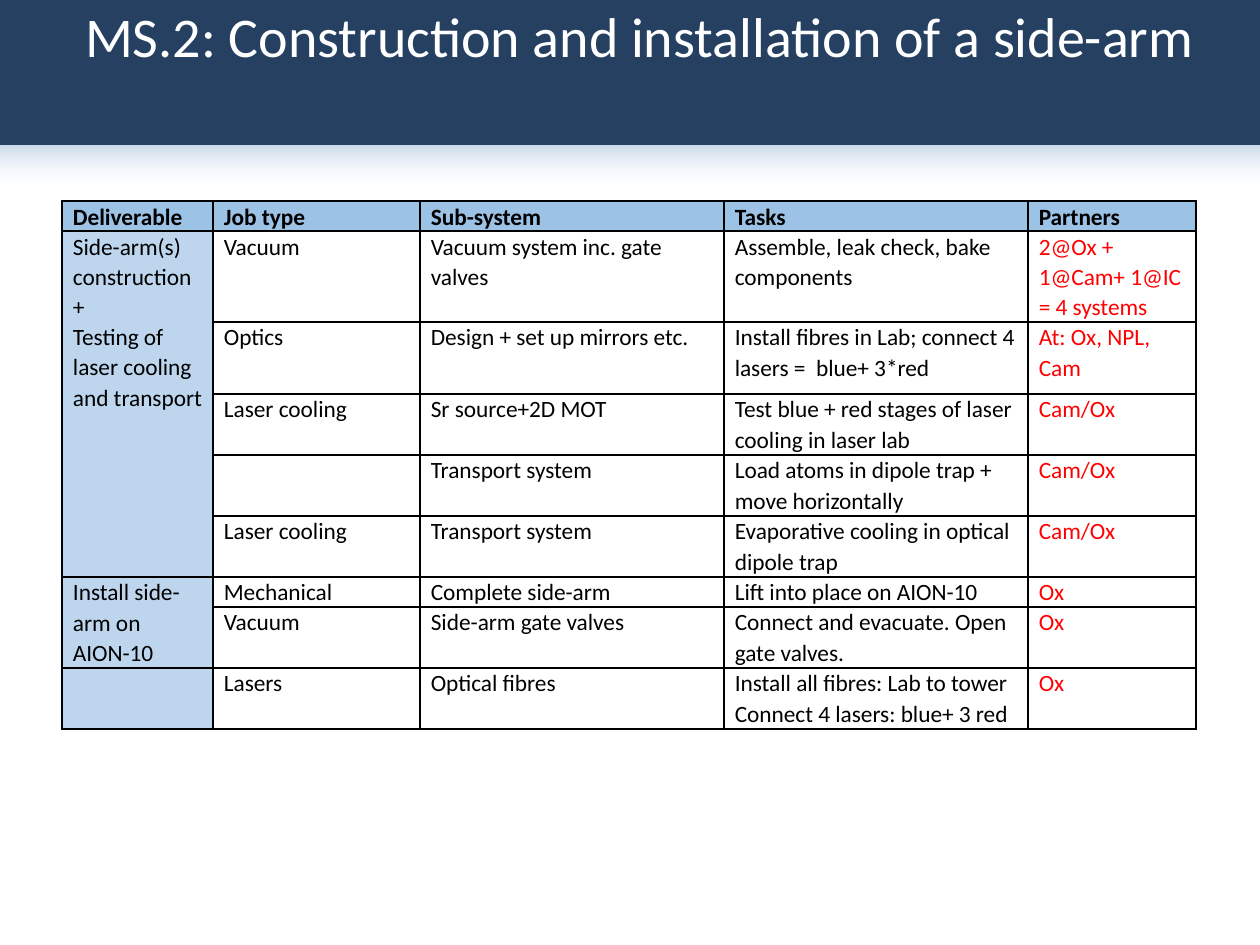
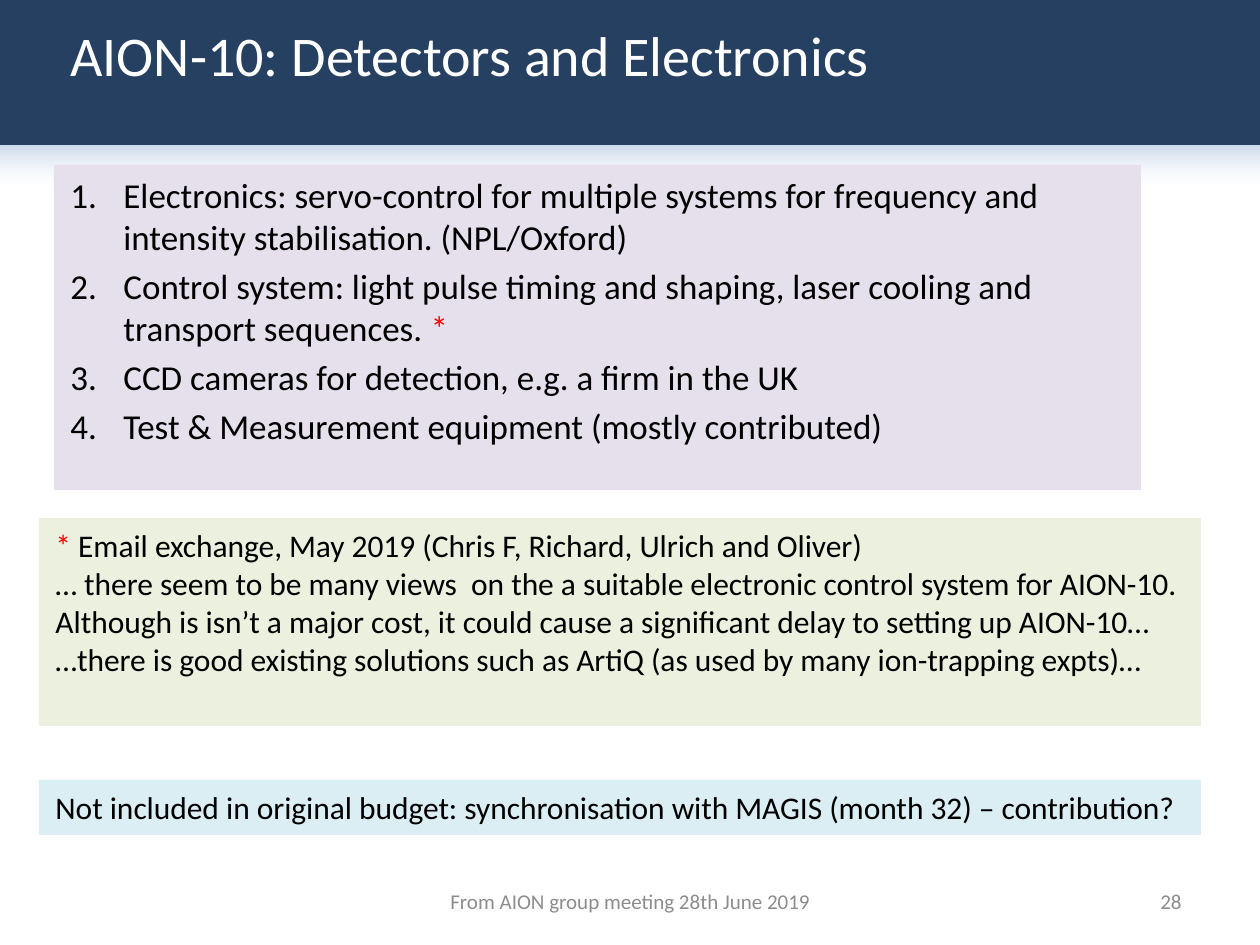
from lxml.etree import SubElement
from pptx import Presentation
from pptx.dml.color import RGBColor
from pptx.enum.shapes import MSO_SHAPE
from pptx.enum.text import MSO_ANCHOR, PP_ALIGN
from pptx.oxml import parse_xml
from pptx.oxml.ns import nsdecls, qn
from pptx.util import Emu, Pt

PX_PER_INCH = 168
SLIDE_WIDTH, SLIDE_HEIGHT = 1260, 945
BAND_HEIGHT, FADE_HEIGHT = 145, 40

NAVY, WHITE, BLACK, RED, GREY = "254061", "FFFFFF", "000000", "FF0000", "8C8C8C"
FADE_STOPS = (("95B3D7", 50), ("E1E8F5", 0))
HEADER_BLUE, DELIVERABLE_BLUE = "9CC2E5", "BDD6EE"
LILAC, PALE_GREEN, PALE_BLUE = "E6E0EC", "EBF1DE", "DBEEF4"

TITLE = {"size": Pt(24), "name": "Calibri"}
LIST = {"size": Pt(15), "name": "Calibri"}
NOTE = {"size": Pt(13.5), "name": "Calibri"}
FOOTER = {"size": Pt(9), "name": "Calibri"}
CELL = {"size": Pt(10), "name": "Calibri", "bold": False}
CELL_HEADER = {**CELL, "bold": True}

COLUMN_WIDTHS = (151, 207, 304, 304, 168)
ROW_HEIGHTS = (30, 91, 72, 61, 61, 61, 30, 61, 61)
MERGED_ROWS = ((1, 5), (6, 7))
TASK_ROWS = (
    ("Deliverable", "Job type", "Sub-system", "Tasks", "Partners"),
    ("Side-arm(s) construction\n+\nTesting of\nlaser cooling and transport",
     "Vacuum", "Vacuum system inc. gate valves",
     "Assemble, leak check, bake components", "2@Ox + 1@Cam+ 1@IC = 4 systems"),
    ("", "Optics", "Design + set up mirrors etc.",
     "Install fibres in Lab; connect 4 lasers =  blue+ 3*red", "At: Ox, NPL, Cam"),
    ("", "Laser cooling", "Sr source+2D MOT",
     "Test blue + red stages of laser cooling in laser lab", "Cam/Ox"),
    ("", "", "Transport system",
     "Load atoms in dipole trap + move horizontally", "Cam/Ox"),
    ("", "Laser cooling", "Transport system",
     "Evaporative cooling in optical dipole trap", "Cam/Ox"),
    ("Install side-arm on AION-10", "Mechanical", "Complete side-arm",
     "Lift into place on AION-10", "Ox"),
    ("", "Vacuum", "Side-arm gate valves",
     "Connect and evacuate. Open gate valves.", "Ox"),
    ("", "Lasers", "Optical fibres",
     "Install all fibres: Lab to tower\nConnect 4 lasers: blue+ 3 red", "Ox"),
)

WORK_ITEMS = (
    [("Electronics: servo-control for multiple systems for frequency and "
      "intensity stabilisation. (NPL/Oxford)", BLACK)],
    [("Control system: light pulse timing and shaping, laser cooling and "
      "transport sequences. ", BLACK), ("*", RED)],
    [("CCD cameras for detection, e.g. a firm in the UK", BLACK)],
    [("Test & Measurement equipment (mostly contributed)", BLACK)],
)
EMAIL_NOTE = (
    [("* ", RED),
     ("Email exchange, May 2019 (Chris F, Richard, Ulrich and Oliver)", BLACK)],
    [("… there seem to be many views  on the a suitable electronic control system "
      "for AION-10. Although is isn’t a major cost, it could cause a significant "
      "delay to setting up AION-10…", BLACK)],
    [("…there is good existing solutions such as ArtiQ (as used by many "
      "ion-trapping expts)…", BLACK)],
)
BUDGET_NOTE = (
    [("Not included in original budget: synchronisation with MAGIS (month 32) "
      "– contribution?", BLACK)],
)


def px(length):
    return Emu(round(length * 914400 / PX_PER_INCH))


def colour(value):
    return RGBColor.from_string(value)


def set_values(target, values):
    for name, value in values.items():
        setattr(target, name, value)


def paint(fill, value):
    fill.solid()
    fill.fore_color.rgb = colour(value)


def write(frame, paragraphs, font, layout=None):
    """Fill a text frame; each paragraph is a list of (text, colour) spans."""
    for index, spans in enumerate(paragraphs):
        para = frame.paragraphs[0] if index == 0 else frame.add_paragraph()
        set_values(para, layout or {})
        for text, ink in spans:
            span = para.add_run()
            span.text = text
            set_values(span.font, font)
            span.font.color.rgb = colour(ink)


def add_text(slide, box, paragraphs, font, layout=None, frame_values=None, fill=None):
    shape = slide.shapes.add_textbox(*map(px, box))
    if fill:
        paint(shape.fill, fill)
    frame = shape.text_frame
    set_values(frame, {"word_wrap": True, **(frame_values or {})})
    write(frame, paragraphs, font, layout)
    return frame


def add_rectangle(slide, box):
    shape = slide.shapes.add_shape(MSO_SHAPE.RECTANGLE, *map(px, box))
    shape.shadow.inherit = False
    shape.line.fill.background()
    return shape


def add_header(slide):
    """Draw the title band and the soft fade below it."""
    fade = add_rectangle(slide, (0, BAND_HEIGHT, SLIDE_WIDTH, FADE_HEIGHT))
    fade.fill.gradient()
    fade.fill.gradient_angle = 270
    for stop, (value, opacity) in zip(fade.fill.gradient_stops, FADE_STOPS):
        stop.color.rgb = colour(value)
    stops = fade.element.spPr.iter(qn("a:srgbClr"))
    for element, (value, opacity) in zip(stops, FADE_STOPS):
        SubElement(element, qn("a:alpha"), val=str(opacity * 1000))
    band = add_rectangle(slide, (0, 0, SLIDE_WIDTH, BAND_HEIGHT))
    paint(band.fill, NAVY)


def add_title(slide, box, text, layout, frame_values):
    add_text(slide, box, [[(text, WHITE)]], TITLE, layout, frame_values)


def add_borders(cell):
    properties = cell._tc.get_or_add_tcPr()
    for side in "LRTB":
        properties.append(parse_xml(
            f'<a:ln{side} {nsdecls("a")} w="12700"><a:solidFill>'
            f'<a:srgbClr val="{BLACK}"/></a:solidFill></a:ln{side}>'))


def add_task_table(slide, left, top):
    box = (left, top, sum(COLUMN_WIDTHS), sum(ROW_HEIGHTS))
    table = slide.shapes.add_table(
        len(ROW_HEIGHTS), len(COLUMN_WIDTHS), *map(px, box)).table
    set_values(table, {"first_row": False, "horz_banding": False})
    for column, width in zip(table.columns, COLUMN_WIDTHS):
        column.width = px(width)
    for row, height in zip(table.rows, ROW_HEIGHTS):
        row.height = px(height)
    margins = {"margin_left": px(11), "margin_right": px(11),
               "margin_top": 0, "margin_bottom": 0}
    last_column = len(COLUMN_WIDTHS) - 1
    for row_index, texts in enumerate(TASK_ROWS):
        for column_index, text in enumerate(texts):
            cell = table.cell(row_index, column_index)
            set_values(cell, margins)
            add_borders(cell)
            is_header = row_index == 0
            if is_header:
                paint(cell.fill, HEADER_BLUE)
            elif column_index == 0:
                paint(cell.fill, DELIVERABLE_BLUE)
            else:
                cell.fill.background()
            if text:
                is_partner = column_index == last_column and not is_header
                ink = RED if is_partner else BLACK
                write(cell.text_frame, [[(line, ink)] for line in text.split("\n")],
                      CELL_HEADER if is_header else CELL, {"line_spacing": 1.07})
    for first, last in MERGED_ROWS:
        table.cell(first, 0).merge(table.cell(last, 0))


def add_numbered_list(slide, box, items, fill):
    frame = add_text(slide, box, items, LIST, {"space_before": Pt(3)}, fill=fill)
    for para in frame.paragraphs:
        properties = para._p.get_or_add_pPr()
        properties.set("marL", str(px(53)))
        properties.set("indent", str(-px(53)))
        SubElement(properties, qn("a:buFont"), typeface="+mj-lt")
        SubElement(properties, qn("a:buAutoNum"), type="arabicPeriod")


def add_footer(slide, text, number):
    middle = {"vertical_anchor": MSO_ANCHOR.MIDDLE}
    for left, width, words, align in ((430, 400, text, PP_ALIGN.CENTER),
                                      (904, 294, number, PP_ALIGN.RIGHT)):
        add_text(slide, (left, 876, width, 50), [[(words, GREY)]], FOOTER,
                 {"alignment": align}, middle)


def build_side_arm_slide(slide):
    add_header(slide)
    add_title(slide, (32, -10, 1215, 158),
              "MS.2: Construction and installation of a side-arm",
              {"alignment": PP_ALIGN.CENTER},
              {"vertical_anchor": MSO_ANCHOR.TOP, "margin_top": px(11)})
    add_task_table(slide, 62, 201)


def build_detectors_slide(slide):
    add_header(slide)
    add_title(slide, (54, -34, 1201, 177), "AION-10: Detectors and Electronics",
              {"alignment": PP_ALIGN.LEFT}, {"vertical_anchor": MSO_ANCHOR.MIDDLE})
    add_numbered_list(slide, (54, 165, 1087, 325), WORK_ITEMS, LILAC)
    add_footer(slide, "From AION group meeting 28th June 2019", "28")
    add_text(slide, (39, 518, 1162, 208), EMAIL_NOTE, NOTE, fill=PALE_GREEN)
    add_text(slide, (39, 780, 1162, 55), BUDGET_NOTE, NOTE, fill=PALE_BLUE)


def main():
    deck = Presentation()
    set_values(deck, {"slide_width": px(SLIDE_WIDTH), "slide_height": px(SLIDE_HEIGHT)})
    for build in (build_side_arm_slide, build_detectors_slide):
        build(deck.slides.add_slide(deck.slide_layouts[6]))
    deck.save("out.pptx")


if __name__ == "__main__":
    main()
